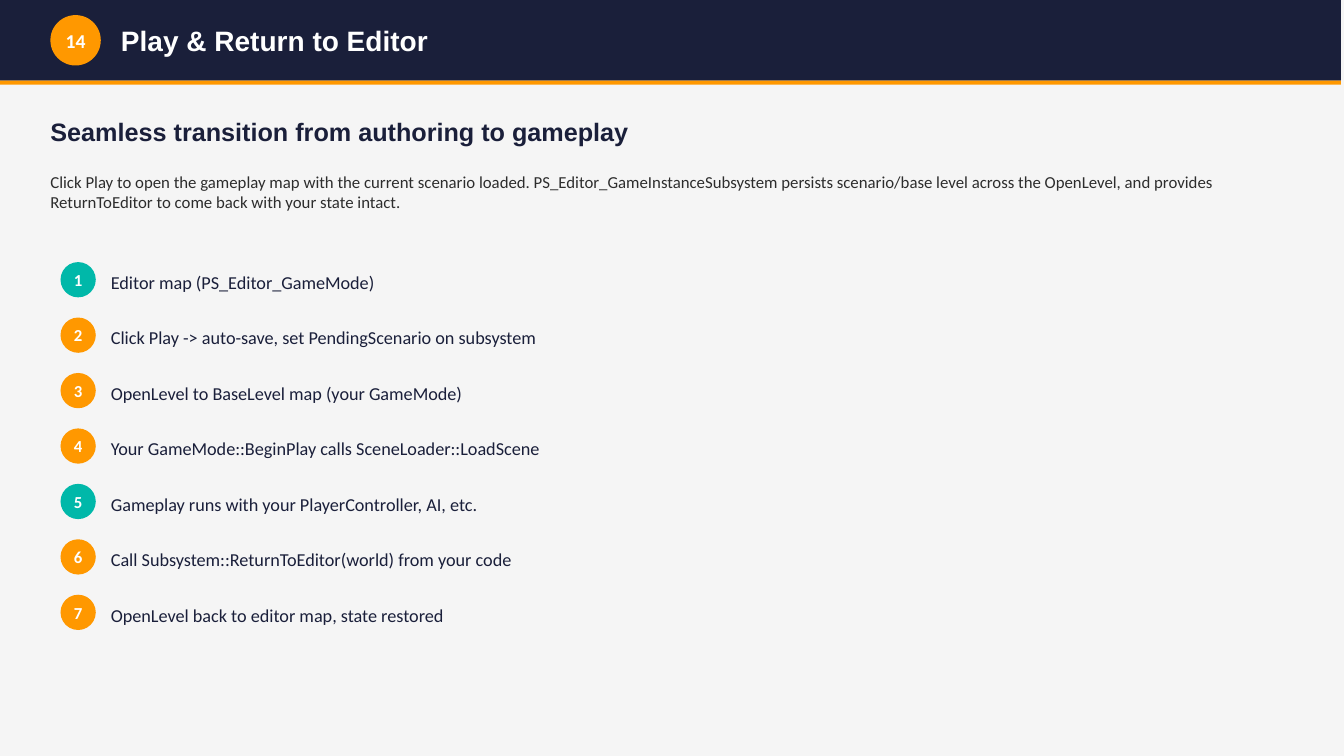
from dataclasses import dataclass

from pptx import Presentation
from pptx.dml.color import RGBColor
from pptx.enum.shapes import MSO_SHAPE
from pptx.enum.text import MSO_ANCHOR, PP_ALIGN
from pptx.util import Inches, Pt

RECTANGLE, OVAL = MSO_SHAPE.RECTANGLE, MSO_SHAPE.OVAL
MIDDLE = MSO_ANCHOR.MIDDLE
LEFT, CENTER = PP_ALIGN.LEFT, PP_ALIGN.CENTER


@dataclass(frozen=True)
class Theme:
    navy: str = "1A1F3A"
    orange: str = "FF9800"
    teal: str = "00B8A9"
    white: str = "FFFFFF"
    body: str = "2D2D2D"
    background: str = "F5F5F5"
    heading_font: str = "Arial"
    body_font: str = "Calibri"
    title_size: int = 20
    subtitle_size: int = 18
    section_size: int = 14
    step_size: int = 13
    body_size: int = 12


class SlideBuilder:
    """Places elements on a grid of square cells, each 0.05 inch wide."""

    CELL = 0.05

    def __init__(self, slide, theme):
        self.slide = slide
        self.theme = theme
        fill = slide.background.fill
        fill.solid()
        fill.fore_color.rgb = RGBColor.from_string(theme.background)

    def place(self, *cells):
        return [Inches(count * self.CELL) for count in cells]

    def block(self, kind, col, row, cols, rows, color):
        shape = self.slide.shapes.add_shape(kind, *self.place(col, row, cols, rows))
        shape.shadow.inherit = False
        shape.fill.solid()
        shape.fill.fore_color.rgb = RGBColor.from_string(color)
        shape.line.fill.background()
        return shape

    def set_text(self, shape, text, size, color, font_name, bold=False, align=LEFT):
        frame = shape.text_frame
        frame.word_wrap = True
        frame.vertical_anchor = MIDDLE
        frame.margin_left = frame.margin_right = 0
        frame.margin_top = frame.margin_bottom = 0
        paragraph = frame.paragraphs[0]
        paragraph.text = text
        paragraph.alignment = align
        font = paragraph.font
        font.name = font_name
        font.size = Pt(size)
        font.bold = bold
        font.color.rgb = RGBColor.from_string(color)

    def text(self, col, row, cols, rows, text, size, color, font_name, bold=False):
        box = self.slide.shapes.add_textbox(*self.place(col, row, cols, rows))
        self.set_text(box, text, size, color, font_name, bold)

    def badge(self, col, row, diameter, number, size, color):
        circle = self.block(OVAL, col, row, diameter, diameter, color)
        self.set_text(circle, str(number), size, self.theme.white,
                      self.theme.body_font, bold=True, align=CENTER)

    def header(self, number, title):
        theme = self.theme
        self.block(RECTANGLE, 0, 0, 266, 16, theme.navy)
        self.block(RECTANGLE, 0, 16, 266, 0.8, theme.orange)
        self.badge(10, 3, 10, number, theme.section_size, theme.orange)
        self.text(24, 3, 220, 10, title, theme.title_size, theme.white,
                  theme.heading_font, bold=True)

    def intro(self, subtitle, summary):
        theme = self.theme
        self.text(10, 22, 246, 8, subtitle, theme.subtitle_size, theme.navy,
                  theme.heading_font, bold=True)
        self.text(10, 30, 246, 16, summary, theme.body_size, theme.body,
                  theme.body_font)

    def steps(self, steps, highlighted, first_row=52, pitch=11):
        theme = self.theme
        for index, step in enumerate(steps):
            number, row = index + 1, first_row + index * pitch
            color = theme.teal if number in highlighted else theme.orange
            self.badge(12, row, 7, number, theme.body_size, color)
            self.text(22, row, 230, 8, step, theme.step_size, theme.navy,
                      theme.body_font)


PLAY_CYCLE = [
    "Editor map (PS_Editor_GameMode)",
    "Click Play -> auto-save, set PendingScenario on subsystem",
    "OpenLevel to BaseLevel map (your GameMode)",
    "Your GameMode::BeginPlay calls SceneLoader::LoadScene",
    "Gameplay runs with your PlayerController, AI, etc.",
    "Call Subsystem::ReturnToEditor(world) from your code",
    "OpenLevel back to editor map, state restored",
]
RUNNING_STATES = {1, 5}


def main():
    deck = Presentation()
    deck.slide_width, deck.slide_height = Inches(13.33), Inches(7.5)
    builder = SlideBuilder(deck.slides.add_slide(deck.slide_layouts[6]), Theme())
    builder.header(14, "Play & Return to Editor")
    builder.intro(
        "Seamless transition from authoring to gameplay",
        "Click Play to open the gameplay map with the current scenario loaded. "
        "PS_Editor_GameInstanceSubsystem persists scenario/base level across the "
        "OpenLevel, and provides ReturnToEditor to come back with your state intact.",
    )
    builder.steps(PLAY_CYCLE, RUNNING_STATES)
    deck.save("out.pptx")


if __name__ == "__main__":
    main()
